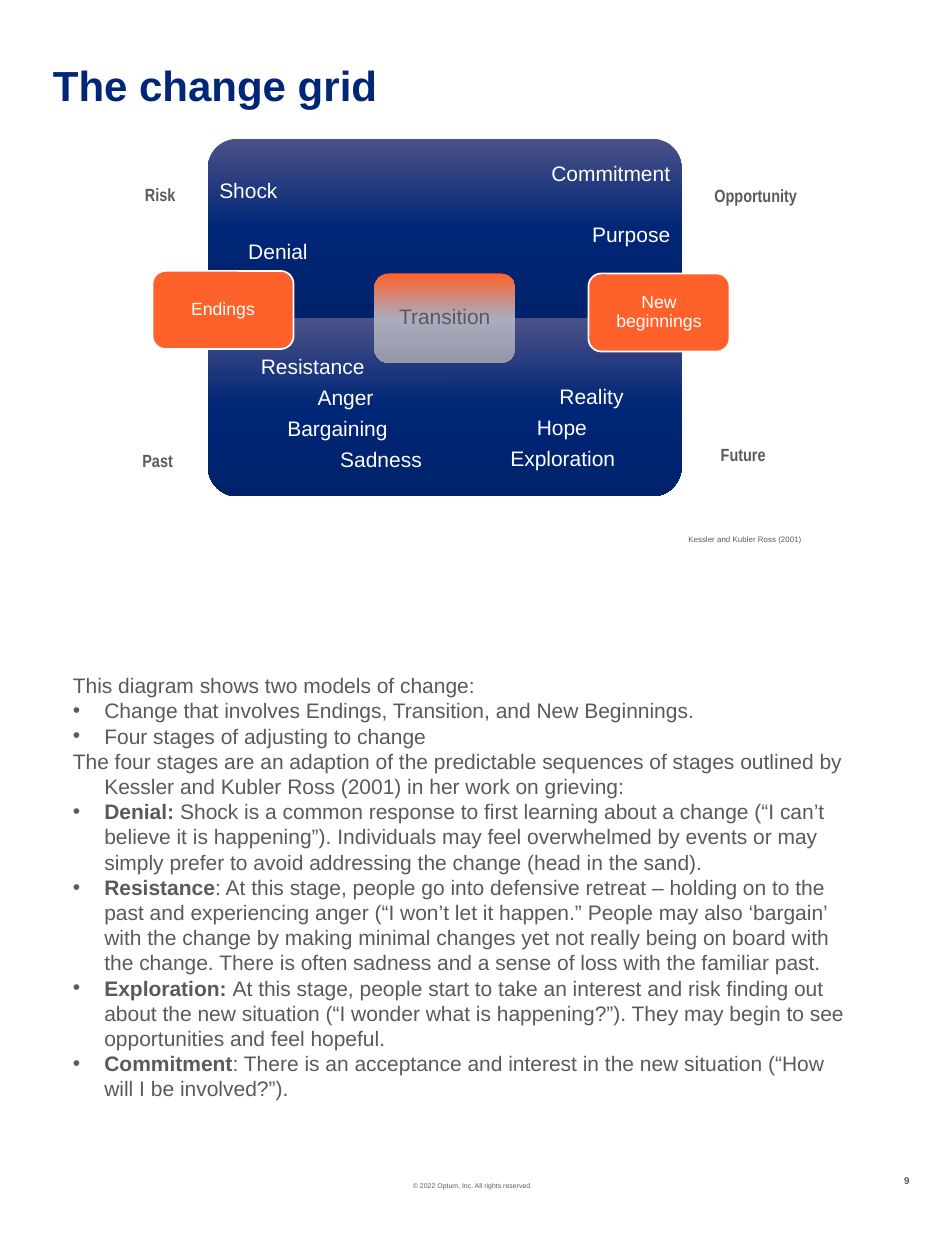
from dataclasses import dataclass

import pptx
import pptx.dml.color
import pptx.enum.shapes
import pptx.enum.text
import pptx.oxml
import pptx.oxml.ns
import pptx.util
from lxml import etree

# The slide is a grid of 750 columns and 1000 rows.
COLUMNS, ROWS = 750, 1000
CELL = pptx.util.Inches(0.01)

COLORS = {"navy": "002677", "navy_top": "4B5187", "navy_base": "00226A",
          "orange": "FF612B", "silver": "AAACBE", "silver_base": "9698AA",
          "gray": "5A5A5A", "white": "FFFFFF"}
NAVY_FADE = ("navy_top", "navy", "navy_base")
TRANSITION_FADE = ("orange", "silver", "silver_base")

ALIGN = pptx.enum.text.PP_ALIGN
ANCHOR = pptx.enum.text.MSO_ANCHOR
SHAPE = pptx.enum.shapes.MSO_SHAPE


@dataclass(frozen=True)
class Area:
    column: float
    row: float
    columns: float
    rows: float

    def emu(self) -> tuple[int, ...]:
        return tuple(int(n * CELL)
                     for n in (self.column, self.row, self.columns, self.rows))


@dataclass(frozen=True)
class Style:
    size: float
    color: str = "gray"
    bold: bool = False
    font: str = "Arial"
    align: ALIGN = ALIGN.LEFT
    spacing: float = 1.0


@dataclass(frozen=True)
class Label:
    text: str
    area: Area
    style: Style
    wrap: bool = False


@dataclass(frozen=True)
class Quadrant:
    across: int
    down: int
    rotation: int
    first_row: int
    words: tuple[tuple[str, int], ...]  # word and its indent in columns
    gap: float = 4.7
    align: ALIGN = ALIGN.LEFT


@dataclass(frozen=True)
class Phase:
    text: str
    area: Area
    style: Style
    fade: tuple[str, ...] = ()


@dataclass(frozen=True)
class Point:
    text: str
    lead: str = ""
    bullet: bool = True
    hanging: bool = True


GRID_LEFT, GRID_TOP, QUAD_COLUMNS, QUAD_ROWS = 165, 110, 188, 142
QUAD_INSET = 9
QUADRANTS = (
    Quadrant(0, 0, 270, 143, (("Shock", 0), ("Denial", 23)), gap=21.9),
    Quadrant(1, 0, 0, 130, (("Commitment", 0), ("Purpose", 0)), gap=21.9,
             align=ALIGN.RIGHT),
    Quadrant(0, 1, 180, 283, (("Resistance", 33), ("Anger", 78),
                              ("Bargaining", 54), ("Sadness", 96))),
    Quadrant(1, 1, 90, 307, (("Reality", 82), ("Hope", 64), ("Exploration", 43))),
)

STAGE = Style(12, "white", spacing=0.9)
PHASE = Style(10.1, "white", align=ALIGN.CENTER, spacing=0.9)
PHASES = (
    Phase("Transition", Area(297, 217, 112, 71),
          Style(12, align=ALIGN.CENTER, spacing=0.9), TRANSITION_FADE),
    Phase("Endings", Area(121, 215, 112, 62), PHASE),
    Phase("New beginnings", Area(467, 217, 112, 62), PHASE),
)

CORNER = Style(10.1, bold=True, font="Arial Narrow")
LABELS = (
    Label("The change grid", Area(42, 52, 506, 27),
          Style(24, "navy", bold=True, spacing=0.9), wrap=True),
    Label("Risk", Area(115, 146, 44, 17), CORNER),
    Label("Opportunity", Area(567, 147, 66, 17), CORNER),
    Label("Past", Area(113, 357, 28, 17), CORNER),
    Label("Future", Area(572, 352, 36, 17), CORNER),
    Label("Kessler and Kubler Ross (2001)", Area(524, 424, 112, 10),
          Style(4.5, align=ALIGN.RIGHT)),
    Label("© 2022 Optum, Inc. All rights reserved.", Area(289, 938, 172, 7),
          Style(3.9, align=ALIGN.CENTER)),
    Label("9", Area(712, 932, 10, 9), Style(5.6, bold=True, align=ALIGN.RIGHT)),
)

BODY_AREA = Area(48, 529, 637, 353)
BODY = Style(12)
POINTS = (
    Point("This diagram shows two models of change:", bullet=False, hanging=False),
    Point("Change that involves Endings, Transition, and New Beginnings."),
    Point("Four stages of adjusting to change"),
    Point("The four stages are an adaption of the predictable sequences of stages "
          "outlined by Kessler and Kubler Ross (2001) in her work on grieving:",
          bullet=False),
    Point(" Shock is a common response to first learning about a change (“I can’t "
          "believe it is happening”). Individuals may feel overwhelmed by events or "
          "may simply prefer to avoid addressing the change (head in the sand).",
          "Denial:"),
    Point(": At this stage, people go into defensive retreat – holding on to the past "
          "and experiencing anger (“I won’t let it happen.” People may also ‘bargain’ "
          "with the change by making minimal changes yet not really being on board "
          "with the change. There is often sadness and a sense of loss with the "
          "familiar past.", "Resistance"),
    Point("At this stage, people start to take an interest and risk finding out about "
          "the new situation (“I wonder what is happening?”). They may begin to see "
          "opportunities and feel hopeful.", "Exploration: "),
    Point(": There is an acceptance and interest in the new situation (“How will I be "
          "involved?”).", "Commitment"),
)


def rgb(name: str) -> pptx.dml.color.RGBColor:
    return pptx.dml.color.RGBColor.from_string(COLORS[name])


def style_paragraph(paragraph, style: Style) -> None:
    paragraph.alignment = style.align
    paragraph.line_spacing = style.spacing
    for run in paragraph.runs:
        run.font.name = style.font
        run.font.size = pptx.util.Pt(style.size)
        run.font.bold = style.bold
        run.font.color.rgb = rgb(style.color)


def set_margins(frame, columns: float) -> None:
    frame.margin_left = frame.margin_right = int(columns * CELL)
    frame.margin_top = frame.margin_bottom = 0


def fade_down(shape, colors: tuple[str, ...]) -> None:
    """Fill with a top-to-bottom gradient that stays upright on rotated shapes."""
    shape.fill.gradient()
    gradient = shape._element.spPr.find(pptx.oxml.ns.qn("a:gradFill"))
    gradient.set("rotWithShape", "0")
    gradient.find(pptx.oxml.ns.qn("a:lin")).set("ang", "5400000")
    stops = gradient.find(pptx.oxml.ns.qn("a:gsLst"))
    for stop in list(stops):
        stops.remove(stop)
    for index, color in enumerate(colors):
        position = index * 100000 // (len(colors) - 1)
        stop = etree.SubElement(stops, pptx.oxml.ns.qn("a:gs"), pos=str(position))
        etree.SubElement(stop, pptx.oxml.ns.qn("a:srgbClr"), val=COLORS[color])


def draw_label(slide, label: Label) -> None:
    frame = slide.shapes.add_textbox(*label.area.emu()).text_frame
    frame.word_wrap = label.wrap
    set_margins(frame, 0)
    frame.text = label.text
    style_paragraph(frame.paragraphs[0], label.style)


def draw_quadrant_panel(slide, quadrant: Quadrant) -> None:
    center_column = GRID_LEFT + (quadrant.across + 0.5) * QUAD_COLUMNS
    center_row = GRID_TOP + (quadrant.down + 0.5) * QUAD_ROWS
    columns, rows = QUAD_COLUMNS, QUAD_ROWS
    if quadrant.rotation % 180:
        columns, rows = rows, columns
    area = Area(center_column - columns / 2, center_row - rows / 2, columns, rows)
    panel = slide.shapes.add_shape(SHAPE.ROUND_1_RECTANGLE, *area.emu())
    panel.rotation = quadrant.rotation
    panel.shadow.inherit = False
    panel.line.fill.background()
    fade_down(panel, NAVY_FADE)


def draw_quadrant_words(slide, quadrant: Quadrant) -> None:
    area = Area(GRID_LEFT + quadrant.across * QUAD_COLUMNS, quadrant.first_row,
                QUAD_COLUMNS, 106)
    frame = slide.shapes.add_textbox(*area.emu()).text_frame
    frame.word_wrap = True
    set_margins(frame, QUAD_INSET)
    frame.text = "\n".join(word for word, _ in quadrant.words)
    for paragraph, (_, indent) in zip(frame.paragraphs, quadrant.words):
        style_paragraph(paragraph, STAGE)
        paragraph.alignment = quadrant.align
        paragraph.space_after = pptx.util.Pt(quadrant.gap)
        paragraph._p.get_or_add_pPr().set("marL", str(indent * CELL))


def draw_phase(slide, phase: Phase) -> None:
    card = slide.shapes.add_shape(SHAPE.ROUNDED_RECTANGLE, *phase.area.emu())
    card.shadow.inherit = False
    if phase.fade:
        fade_down(card, phase.fade)
        card.line.fill.background()
    else:
        card.fill.solid()
        card.fill.fore_color.rgb = rgb("orange")
        card.line.color.rgb = rgb("white")
        card.line.width = pptx.util.Pt(1)
    frame = card.text_frame
    frame.word_wrap = True
    frame.vertical_anchor = ANCHOR.MIDDLE
    set_margins(frame, 7)
    frame.text = phase.text
    style_paragraph(frame.paragraphs[0], phase.style)


def draw_body(slide) -> None:
    frame = slide.shapes.add_textbox(*BODY_AREA.emu()).text_frame
    frame.word_wrap = True
    frame.text = "\n".join(point.text for point in POINTS)
    for paragraph, point in zip(frame.paragraphs, POINTS):
        properties = paragraph._p.get_or_add_pPr()
        if point.hanging:
            properties.set("marL", str(25 * CELL))
            properties.set("indent", str(-25 * CELL))
        if point.lead:
            paragraph.text = point.lead
            paragraph.add_run().text = point.text
        style_paragraph(paragraph, BODY)
        paragraph.runs[0].font.bold = bool(point.lead)
        if point.bullet:
            etree.SubElement(properties, pptx.oxml.ns.qn("a:buFont"), typeface="Arial")
            etree.SubElement(properties, pptx.oxml.ns.qn("a:buChar"), char="•")


def main() -> None:
    deck = pptx.Presentation()
    deck.slide_width, deck.slide_height = COLUMNS * CELL, ROWS * CELL
    slide = deck.slides.add_slide(deck.slide_layouts[6])
    for draw in (draw_quadrant_panel, draw_quadrant_words):
        for quadrant in QUADRANTS:
            draw(slide, quadrant)
    for phase in PHASES:
        draw_phase(slide, phase)
    for label in LABELS:
        draw_label(slide, label)
    draw_body(slide)
    deck.save("out.pptx")


if __name__ == "__main__":
    main()
